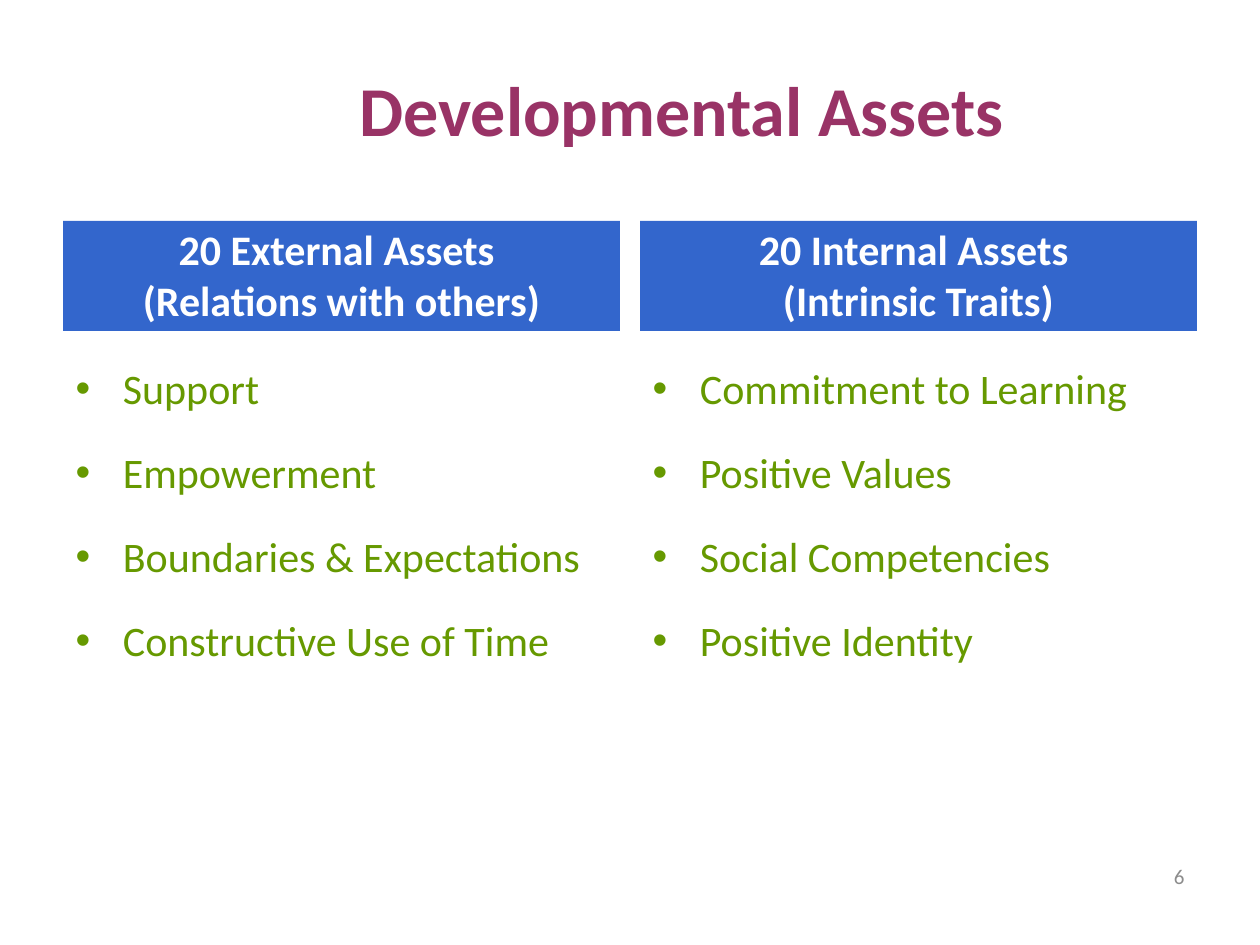
from pptx import Presentation
from pptx.dml.color import RGBColor
from pptx.enum.text import MSO_ANCHOR, MSO_AUTO_SIZE, PP_ALIGN
from pptx.util import Pt

LEFT, MID, RIGHT = PP_ALIGN.LEFT, PP_ALIGN.CENTER, PP_ALIGN.RIGHT
TOP, CENTER, LOW = MSO_ANCHOR.TOP, MSO_ANCHOR.MIDDLE, MSO_ANCHOR.BOTTOM
FIXED = MSO_AUTO_SIZE.NONE
SCALE = 914400 / 126
FONT = "Calibri"
HEX = {"title": "993366", "band": "3366CC", "head": "FFFFFF",
       "item": "669900", "page": "8C8C8C"}
COLS = [
    (["20 External Assets ", "(Relations with others)"],
     ["Support", "Empowerment", "Boundaries & Expectations",
      "Constructive Use of Time"]),
    (["20 Internal Assets ", "(Intrinsic Traits)"],
     ["Commitment to Learning", "Positive Values", "Social Competencies",
      "Positive Identity"]),
]


def px(num):
    """Turn pixels into EMU."""
    return round(num * SCALE)


def color(name):
    """Look up a named colour."""
    return RGBColor.from_string(HEX[name])


def place(shape, x, y, w, h):
    """Move and size a shape, in pixels."""
    shape.left, shape.top, shape.width, shape.height = map(px, (x, y, w, h))


def write(shape, lines, tint, size, bold=False, align=LEFT, anchor=TOP,
          space=1.0, gap=0):
    """Fill a shape with one paragraph a line."""
    frame = shape.text_frame
    frame.word_wrap = True
    frame.auto_size = FIXED
    frame.vertical_anchor = anchor
    for i, line in enumerate(lines):
        para = frame.add_paragraph() if i else frame.paragraphs[0]
        para.alignment = align
        para.line_spacing = space
        para.space_before = Pt(gap if i else 0)
        run = para.add_run()
        run.text = line
        font = run.font
        font.name, font.size, font.bold = FONT, Pt(size), bold
        font.color.rgb = color(tint)


def column(head, body, x, names, items):
    """Lay out a header band and the list below it."""
    place(head, x, 221, 557, 110)
    head.fill.solid()
    head.fill.fore_color.rgb = color("band")
    write(head, names, "head", 24, True, MID, LOW)
    place(body, x, 331, 557, 476)
    write(body, items, "item", 24, space=1.5, gap=4.8)


def number(slide, text):
    """Add the page number."""
    box = slide.shapes.add_textbox(px(903), px(851), px(294), px(50))
    write(box, [text], "page", 12, align=RIGHT, anchor=CENTER)


def main():
    """Build and save the slide."""
    deck = Presentation()
    deck.slide_width, deck.slide_height = px(1260), px(945)
    slide = deck.slides.add_slide(deck.slide_layouts[4])
    title, *parts = slide.placeholders
    place(title, 347, 38, 850, 157)
    write(title, ["Developmental Assets"], "title", 40, True,
          anchor=CENTER, space=0.8)
    for i, (names, items) in enumerate(COLS):
        head, body = parts[2 * i:2 * i + 2]
        column(head, body, 63 + 577 * i, names, items)
    number(slide, "6")
    deck.save("out.pptx")


if __name__ == "__main__":
    main()
